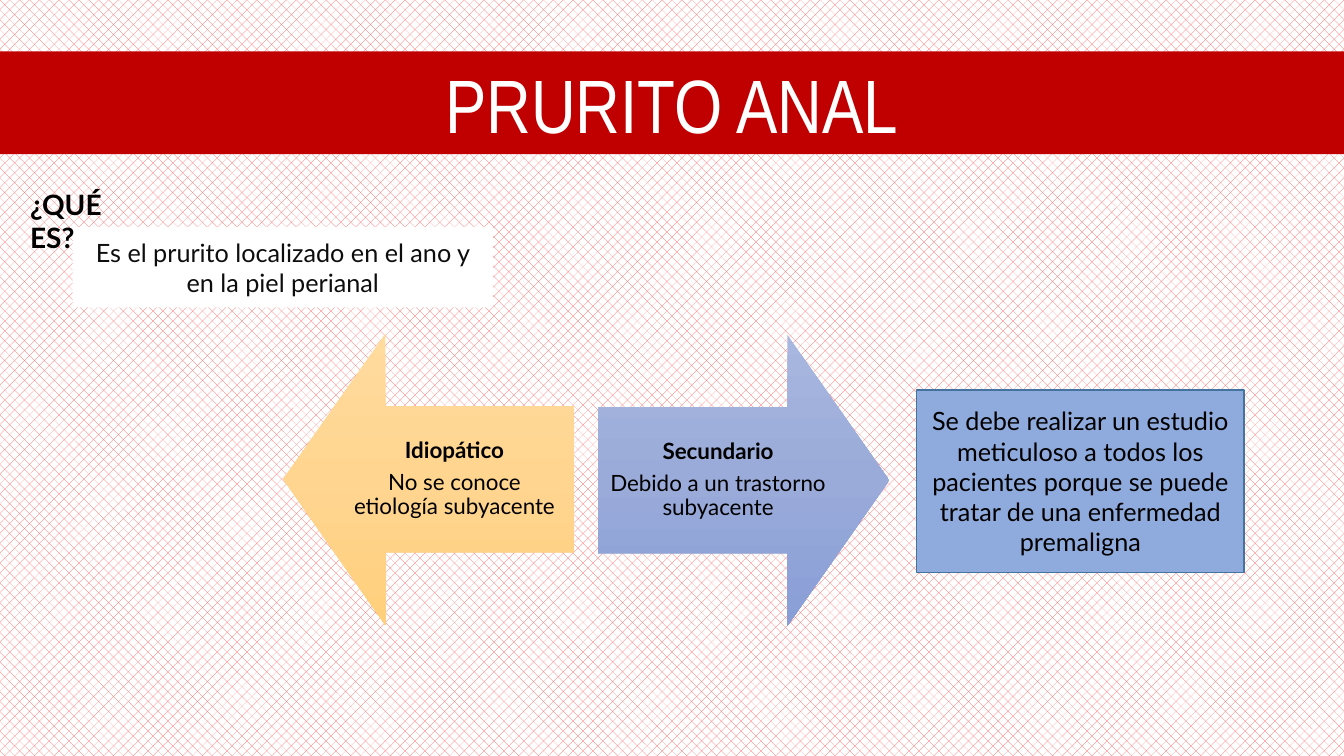
from copy import deepcopy

from pptx import Presentation
from pptx.dml.color import RGBColor
from pptx.enum import dml, shapes, text
from pptx.util import Inches, Pt

COLORS = {
    "pattern": "FF5D5D", "white": "FFFFFF", "banner": "C00000",
    "ink": "0D0D0D", "black": "000000", "note": "8FAADC", "edge": "43739E",
}
GRADIENTS = {
    "amber": ["FFDB9E", "FFD590", "FFD07C"],
    "blue": ["A8B7DF", "9AABD9", "889ED7"],
}


def rgb(name):
    return RGBColor.from_string(COLORS.get(name, name))


def write(sp, paragraphs, size=18, font="Lato", color="black", bold_first=False,
          align=text.PP_ALIGN.CENTER, anchor=text.MSO_ANCHOR.MIDDLE,
          spacing=None, after=None, inset=None):
    tf = sp.text_frame
    tf.word_wrap = True
    tf.vertical_anchor = anchor
    if inset is not None:
        tf.margin_left = tf.margin_right = Inches(inset)
        tf.margin_top = tf.margin_bottom = Inches(inset)
    for i, line in enumerate(paragraphs):
        p = tf.paragraphs[0] if i == 0 else tf.add_paragraph()
        p.alignment, p.line_spacing = align, spacing
        if after is not None:
            p.space_after = Pt(after)
        r = p.add_run()
        r.text = line
        r.font.name, r.font.size = font, Pt(size)
        r.font.bold = bold_first and i == 0
        r.font.color.rgb = rgb(color)


prs = Presentation()
prs.slide_width, prs.slide_height = Inches(13.33), Inches(7.5)
s = prs.slides.add_slide(prs.slide_layouts[6])

# Patterned background
bg = s.background.fill
bg.patterned()
bg.pattern = dml.MSO_PATTERN.PERCENT_30
bg.fore_color.rgb = rgb("pattern")
bg.back_color.rgb = rgb("white")

# Title banner, definition and closing note
boxes = [
    ((0, 0.51, 13.33, 1.02), "banner", None, "PRURITO ANAL",
     dict(size=54, font="Arial Narrow", color="white")),
    ((0.72, 2.25, 4.17, 0.8), "white", None,
     "Es el prurito localizado en el ano y en la piel perianal", dict(color="ink")),
    ((9.09, 3.87, 3.25, 1.81), "note", "edge",
     "Se debe realizar un estudio meticuloso a todos los pacientes porque "
     "se puede tratar de una enfermedad premaligna", {}),
]
for place, fill, edge, words, style in boxes:
    sp = s.shapes.add_shape(shapes.MSO_SHAPE.RECTANGLE, *map(Inches, place))
    sp.shadow.inherit = False
    sp.fill.solid()
    sp.fill.fore_color.rgb = rgb(fill)
    if edge:
        sp.line.color.rgb = rgb(edge)
        sp.line.width = Pt(1)
    else:
        sp.line.fill.background()
    write(sp, [words], **style)

# Question heading
sp = s.shapes.add_textbox(Inches(0.2), Inches(1.81), Inches(1.38), Inches(0.44))
write(sp, ["¿QUÉ ES?"], size=20, bold_first=True,
      align=text.PP_ALIGN.LEFT, anchor=text.MSO_ANCHOR.TOP)

# Opposing arrows for the two types
arrows = [
    (shapes.MSO_SHAPE.LEFT_ARROW, 2.81, 3.31, "amber",
     ["Idiopático", "No se conoce etiología subyacente"]),
    (shapes.MSO_SHAPE.RIGHT_ARROW, 5.93, 3.32, "blue",
     ["Secundario", "Debido a un trastorno subyacente"]),
]
for kind, left, top, gradient, lines in arrows:
    sp = s.shapes.add_shape(kind, Inches(left), Inches(top), Inches(2.89), Inches(2.89))
    sp.shadow.inherit = False
    sp.line.fill.background()
    sp.adjustments[0], sp.adjustments[1] = 0.5, 0.35
    sp.fill.gradient()
    sp.fill.gradient_angle = 270
    # The default gradient has two stops; a third is needed
    stop_list = sp._element.spPr.find(".//{*}gsLst")
    stop_list.append(deepcopy(stop_list[0]))
    for i, (stop, shade) in enumerate(zip(sp.fill.gradient_stops, GRADIENTS[gradient])):
        stop.position = i / 2
        stop.color.rgb = rgb(shade)
    write(sp, lines, size=16, bold_first=True, spacing=0.9, after=5.6, inset=0.12)

prs.save("out.pptx")
